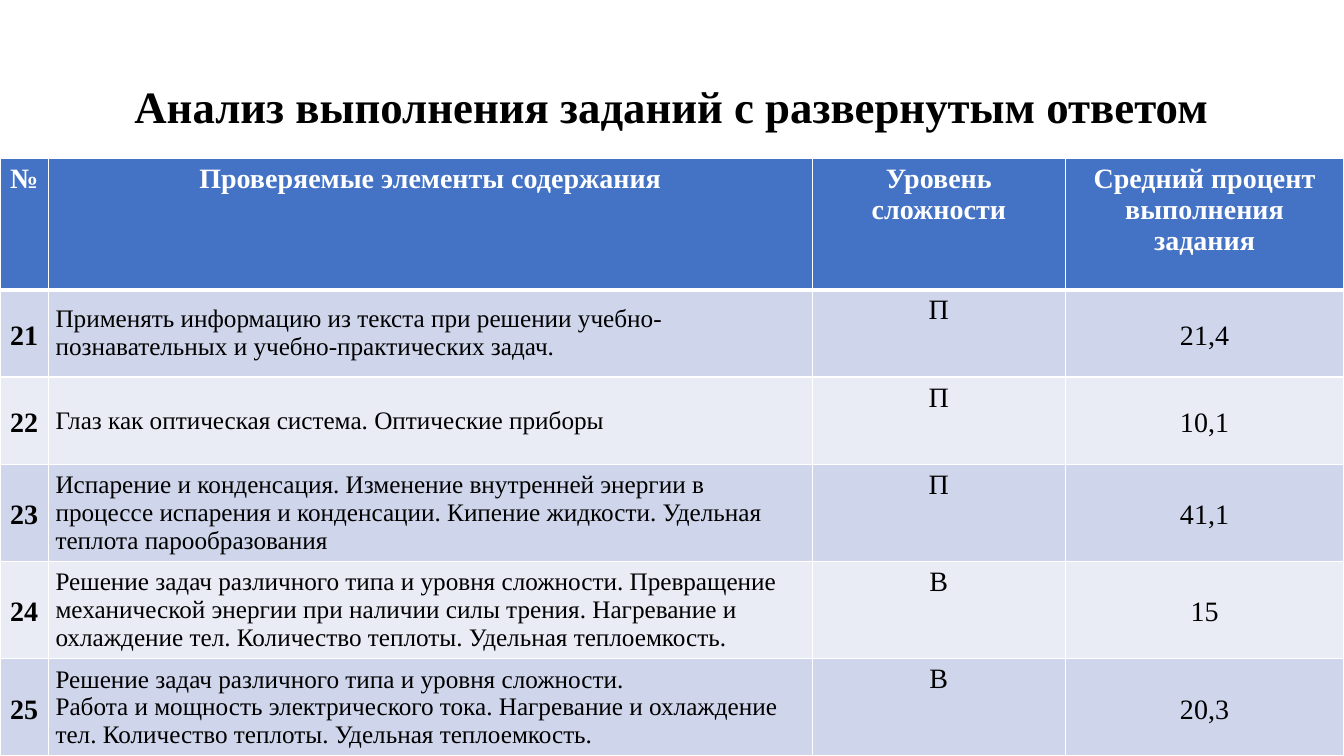
from dataclasses import dataclass

from lxml.etree import SubElement
from pptx import Presentation
from pptx.dml.color import RGBColor
from pptx.enum.text import MSO_ANCHOR as Anchor, PP_ALIGN as Align
from pptx.oxml.ns import qn
from pptx.util import Cm, Pt


@dataclass(frozen=True)
class Theme:
    font: str = "Times New Roman"
    black: str = "000000"
    white: str = "FFFFFF"
    header: str = "4472C4"
    bands: tuple = ("CFD5EA", "E9EBF5")
    title_size: int = 32
    table_size: int = 20
    topic_size: int = 18
    thin_border: int = 1
    header_border: int = 3


THEME = Theme()

TITLE = "Анализ выполнения заданий с развернутым ответом"
HEADERS = ("№", "Проверяемые элементы содержания", "Уровень сложности",
           "Средний процент выполнения задания")
TASKS = (
    ("21", "Применять информацию из текста при решении "
           "учебно-познавательных и учебно-практических задач.", "П", "21,4"),
    ("22", "Глаз как оптическая система. Оптические приборы", "П", "10,1"),
    ("23", "Испарение и конденсация. Изменение внутренней энергии в процессе "
           "испарения и конденсации. Кипение жидкости. Удельная теплота "
           "парообразования", "П", "41,1"),
    ("24", "Решение задач различного типа и уровня сложности. Превращение "
           "механической энергии при наличии силы трения. Нагревание и "
           "охлаждение тел. Количество теплоты. Удельная теплоемкость.",
     "В", "15"),
    ("25", "Решение задач различного типа и уровня сложности.\n"
           "Работа и мощность электрического тока. Нагревание и охлаждение "
           "тел. Количество теплоты. Удельная теплоемкость.", "В", "20,3"),
)
COLUMN_WIDTHS = (1.22, 19.25, 6.38, 7.01)
ROW_HEIGHTS = (3.3, 2.2, 2.2, 2.45, 2.45, 2.45)


def write_text(text_frame, text, size, color=THEME.black, bold=False,
               align=Align.CENTER, line_spacing=None):
    text_frame.text = text
    for paragraph in text_frame.paragraphs:
        paragraph.alignment = align
        paragraph.line_spacing = line_spacing
        paragraph.font.name = THEME.font
        paragraph.font.size = Pt(size)
        paragraph.font.bold = bold
        paragraph.font.color.rgb = RGBColor.from_string(color)


def add_title(slide):
    box = slide.shapes.add_textbox(Cm(2.33), Cm(0.91), Cm(29.2), Cm(3.68))
    box.text_frame.word_wrap = True
    box.text_frame.vertical_anchor = Anchor.MIDDLE
    write_text(box.text_frame, TITLE, THEME.title_size, bold=True,
               line_spacing=0.9)


def style_cell(cell, fill, top=THEME.thin_border, bottom=THEME.thin_border):
    # Borders come before the fill in the cell properties
    properties = cell._tc.get_or_add_tcPr()
    widths = {"L": THEME.thin_border, "R": THEME.thin_border,
              "T": top, "B": bottom}
    for side, width in widths.items():
        line = SubElement(properties, qn(f"a:ln{side}"), w=str(Pt(width)))
        line_fill = SubElement(line, qn("a:solidFill"))
        SubElement(line_fill, qn("a:srgbClr"), val=THEME.white)
    cell.fill.solid()
    cell.fill.fore_color.rgb = RGBColor.from_string(fill)


def center_vertically(cell):
    cell.vertical_anchor = Anchor.MIDDLE
    cell.margin_left = cell.margin_right = Cm(0.18)
    cell.margin_top = cell.margin_bottom = 0


def fill_header(table):
    for column, heading in enumerate(HEADERS):
        cell = table.cell(0, column)
        style_cell(cell, THEME.header, bottom=THEME.header_border)
        write_text(cell.text_frame, heading, THEME.table_size, THEME.white,
                   bold=True)


def fill_task(table, row, task):
    band = THEME.bands[(row - 1) % 2]
    top = THEME.header_border if row == 1 else THEME.thin_border
    cells = [table.cell(row, column) for column in range(len(task))]
    for cell in cells:
        style_cell(cell, band, top=top)

    number, topic, level, percent = cells
    for cell in (number, topic, percent):
        center_vertically(cell)
    write_text(number.text_frame, task[0], THEME.table_size, bold=True,
               line_spacing=1.15)
    write_text(topic.text_frame, task[1], THEME.topic_size, align=Align.LEFT)
    write_text(level.text_frame, task[2], THEME.table_size)
    write_text(percent.text_frame, task[3], THEME.table_size,
               line_spacing=1.15)


def add_results_table(slide):
    frame = slide.shapes.add_table(
        len(ROW_HEIGHTS), len(COLUMN_WIDTHS), Cm(0), Cm(4),
        Cm(sum(COLUMN_WIDTHS)), Cm(sum(ROW_HEIGHTS)))
    table = frame.table
    for column, width in zip(table.columns, COLUMN_WIDTHS):
        column.width = Cm(width)
    for row, height in zip(table.rows, ROW_HEIGHTS):
        row.height = Cm(height)

    fill_header(table)
    for row, task in enumerate(TASKS, start=1):
        fill_task(table, row, task)


def main():
    presentation = Presentation()
    presentation.slide_width = Cm(33.87)
    presentation.slide_height = Cm(19.05)
    slide = presentation.slides.add_slide(presentation.slide_layouts[6])
    add_title(slide)
    add_results_table(slide)
    presentation.save("out.pptx")


if __name__ == "__main__":
    main()
